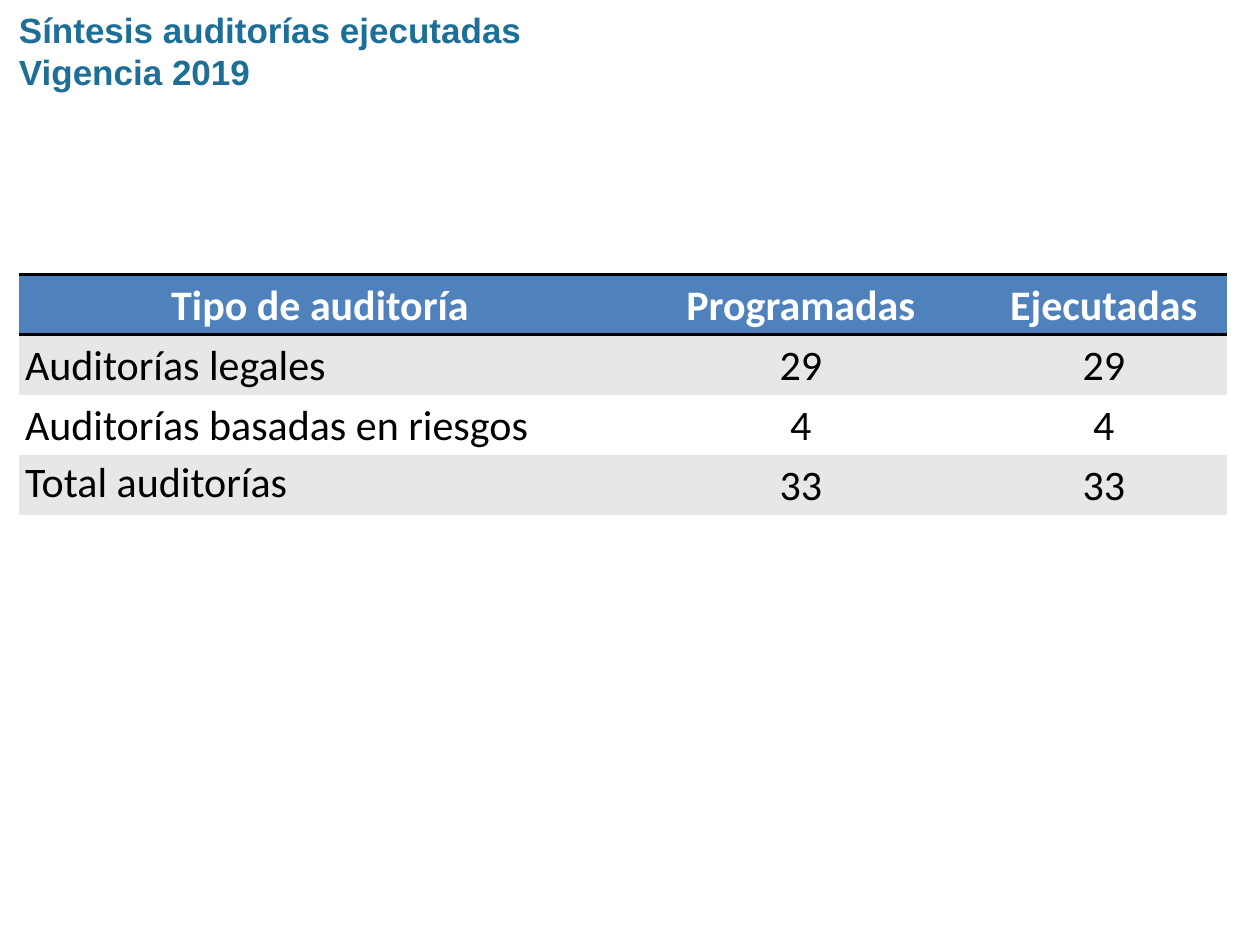
from lxml.etree import SubElement
from pptx import Presentation
from pptx.dml.color import RGBColor
from pptx.enum.text import MSO_ANCHOR, MSO_AUTO_SIZE, PP_ALIGN
from pptx.oxml.ns import qn
from pptx.util import Pt

TITLE_LINES = ["Síntesis auditorías ejecutadas", "Vigencia 2019"]
AUDIT_ROWS = [
    ("Tipo de auditoría", "Programadas", "Ejecutadas"),
    ("Auditorías legales", "29", "29"),
    ("Auditorías basadas en riesgos", "4", "4"),
    ("Total auditorías", "33", "33"),
]
COLUMN_WIDTHS = [344.2, 205.2, 141.1]
ROW_HEIGHT = 34.3
THEME = {
    "title": "1D6F98",
    "header": "4F81BD",
    "header_text": "FFFFFF",
    "bands": ["FFFFFF", "E7E7E7"],
    "text": "000000",
    "rule": "000000",
    "rule_width": 2.25,
    "title_font": "Arial",
    "title_size": 20,
    "table_font": "Calibri",
    "table_size": 24,
}


def add_run(paragraph, text, font_name, size, color, bold):
    run = paragraph.add_run()
    run.text = text
    run.font.name = font_name
    run.font.size = Pt(size)
    run.font.bold = bold
    run.font.color.rgb = RGBColor.from_string(color)


def set_borders(cell, ruled_edges):
    properties = cell._tc.get_or_add_tcPr()
    for edge in "LRTB":
        line = SubElement(properties, qn(f"a:ln{edge}"))
        if edge in ruled_edges:
            line.set("w", str(Pt(THEME["rule_width"])))
            fill = SubElement(line, qn("a:solidFill"))
            SubElement(fill, qn("a:srgbClr"), val=THEME["rule"])
        else:
            SubElement(line, qn("a:noFill"))


def add_title(slide):
    title = slide.shapes.title
    title.left, title.top = Pt(3.6), Pt(1.44)
    title.width, title.height = Pt(429.8), Pt(55.4)
    frame = title.text_frame
    frame.word_wrap = True
    frame.auto_size = MSO_AUTO_SIZE.SHAPE_TO_FIT_TEXT
    frame.vertical_anchor = MSO_ANCHOR.TOP
    for index, text in enumerate(TITLE_LINES):
        paragraph = frame.add_paragraph() if index else frame.paragraphs[0]
        paragraph.alignment = PP_ALIGN.LEFT
        paragraph.line_spacing = Pt(24)
        paragraph.space_before = Pt(0)
        add_run(paragraph, text, THEME["title_font"], THEME["title_size"], THEME["title"], True)


def fill_cell(cell, text, row, column):
    is_header = row == 0
    is_total_label = row == len(AUDIT_ROWS) - 1 and column == 0
    cell.margin_left = cell.margin_right = Pt(3.5)
    cell.margin_top = cell.margin_bottom = Pt(1.44)
    cell.vertical_anchor = MSO_ANCHOR.TOP
    set_borders(cell, {0: "TB", 1: "T"}.get(row, ""))
    cell.fill.solid()
    color = THEME["header"] if is_header else THEME["bands"][row % 2]
    cell.fill.fore_color.rgb = RGBColor.from_string(color)
    paragraph = cell.text_frame.paragraphs[0]
    paragraph.alignment = PP_ALIGN.CENTER if is_header or column else PP_ALIGN.LEFT
    paragraph.line_spacing = 1.0 if is_total_label else 1.07
    text_color = THEME["header_text"] if is_header else THEME["text"]
    add_run(paragraph, text, THEME["table_font"], THEME["table_size"], text_color, is_header)


def add_audit_table(slide):
    table = slide.shapes.add_table(
        len(AUDIT_ROWS), len(COLUMN_WIDTHS), Pt(10.8), Pt(157),
        Pt(sum(COLUMN_WIDTHS)), Pt(ROW_HEIGHT * len(AUDIT_ROWS)),
    ).table
    for column, width in zip(table.columns, COLUMN_WIDTHS):
        column.width = Pt(width)
    for row, values in enumerate(AUDIT_ROWS):
        table.rows[row].height = Pt(ROW_HEIGHT)
        for column, text in enumerate(values):
            fill_cell(table.cell(row, column), text, row, column)


def main():
    presentation = Presentation()
    presentation.slide_width, presentation.slide_height = Pt(720), Pt(540)
    slide = presentation.slides.add_slide(presentation.slide_layouts[5])
    add_title(slide)
    add_audit_table(slide)
    presentation.save("out.pptx")


if __name__ == "__main__":
    main()
